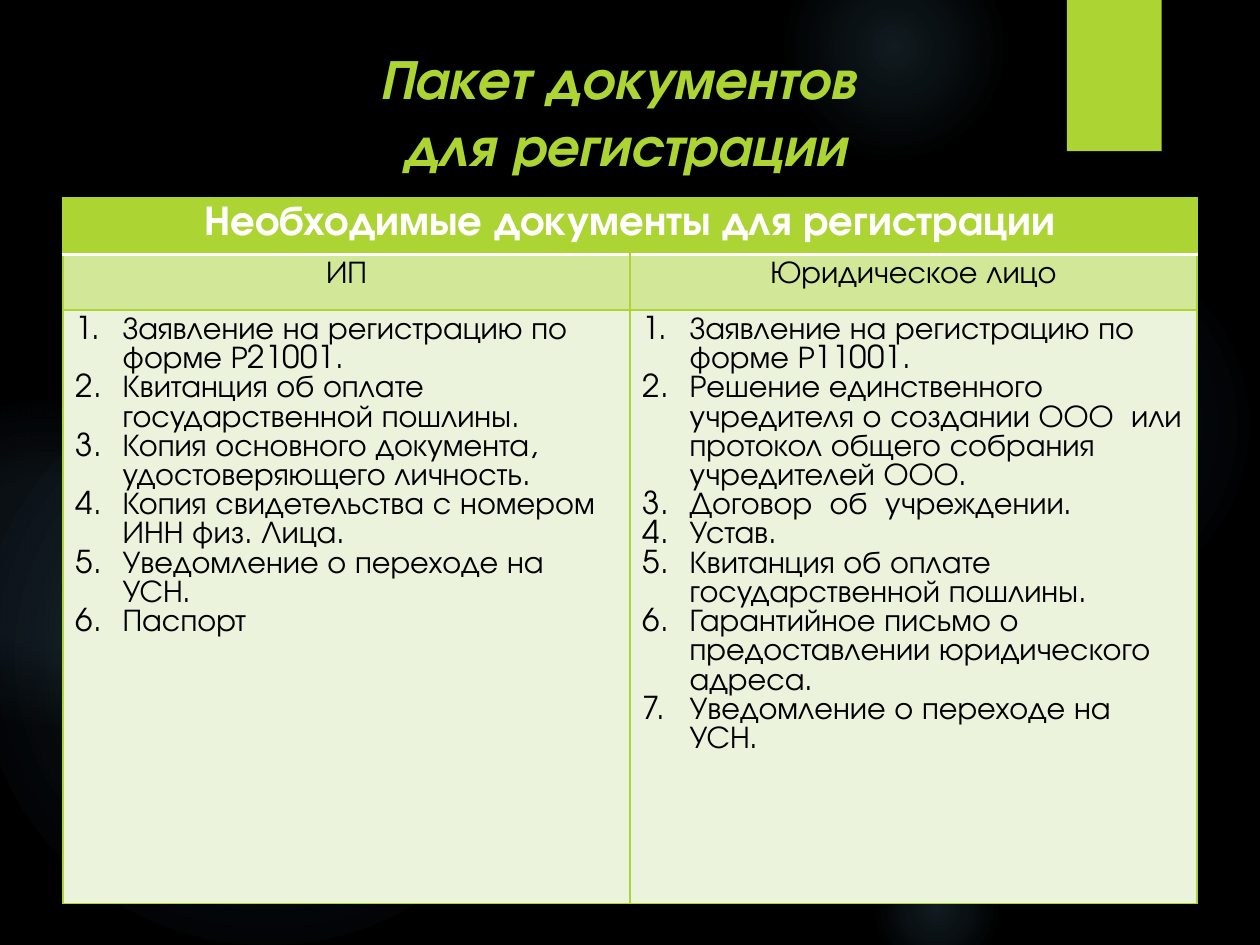
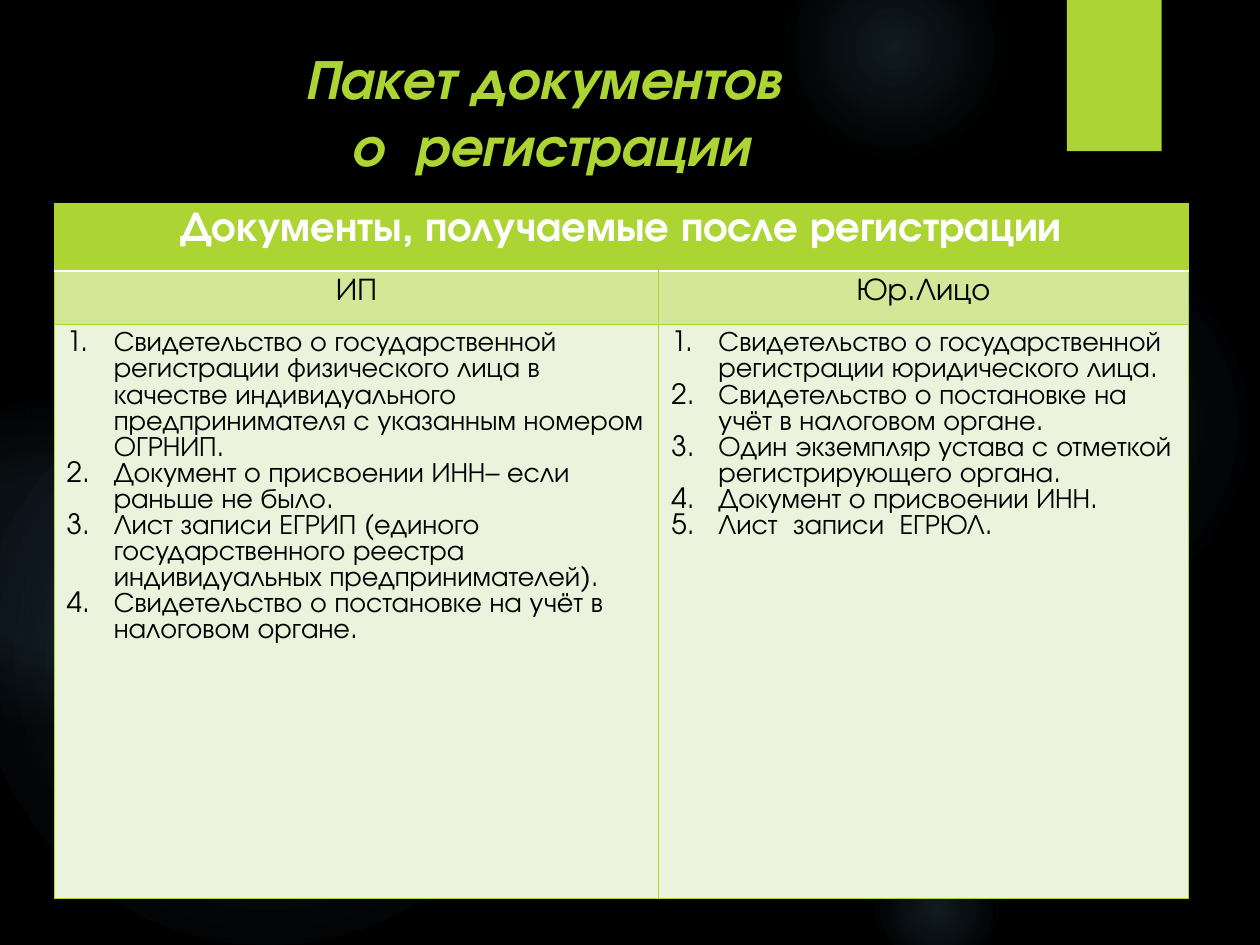
from lxml import etree
from pptx import Presentation
from pptx.dml.color import RGBColor
from pptx.enum.shapes import MSO_SHAPE
from pptx.enum.text import MSO_ANCHOR, MSO_AUTO_SIZE, PP_ALIGN
from pptx.oxml import parse_xml
from pptx.util import Cm, Pt

OVAL, RECT = MSO_SHAPE.OVAL, MSO_SHAPE.RECTANGLE
TOP, FIXED = MSO_ANCHOR.TOP, MSO_AUTO_SIZE.NONE
MID, LEFT = PP_ALIGN.CENTER, PP_ALIGN.LEFT
NS = "http://schemas.openxmlformats.org/drawingml/2006/main"
FACE = "TeX Gyre Adventor"
LIME, GLOW, WHITE, BLACK = "ACD433", "7AC4F0", "FFFFFF", "000000"
FILLS = [LIME, "D2E798", "EBF3DC"]
TIGHT, LOOSE = 0.93, 1.2


def hue(code):
    return RGBColor.from_string(code)


def write(frame, lines, size, color, pitch, align, bold=False, italic=False):
    look = {"name": FACE, "size": Pt(size), "bold": bold, "italic": italic}
    for i, line in enumerate(lines):
        para = frame.add_paragraph() if i else frame.paragraphs[0]
        para.alignment = align
        para.line_spacing = Pt(round(size * pitch, 1))
        para.space_before = para.space_after = Pt(0)
        run = para.add_run()
        run.text = line
        for key, val in look.items():
            setattr(run.font, key, val)
        run.font.color.rgb = hue(color)
        if align == LEFT:
            props = para._p.get_or_add_pPr()
            props.set("marL", str(Cm(0.95)))
            props.set("indent", str(-Cm(0.95)))
            etree.SubElement(props, f"{{{NS}}}buAutoNum", type="arabicPeriod")


pages = [
    {
        "title": ["Пакет документов ", "для регистрации"],
        "box": (1.09, 0.74, 23.01, 2.59),
        "spot": (1.27, 3.99),
        "cols": [11.43, 11.43],
        "rows": [1.14, 1.12, 11.96],
        "head": "Необходимые документы для регистрации",
        "kinds": ["ИП", "Юридическое лицо"],
        "size": 18,
        "lists": [
            [
                "Заявление на регистрацию по форме Р21001.",
                "Квитанция об оплате государственной пошлины.",
                "Копия основного документа, удостоверяющего личность.",
                "Копия свидетельства с номером ИНН физ. Лица.",
                "Уведомление о переходе на УСН.",
                "Паспорт",
            ],
            [
                "Заявление на регистрацию по форме Р11001.",
                "Решение единственного учредителя о создании ООО  или "
                "протокол общего собрания учредителей ООО.",
                "Договор  об  учреждении.",
                "Устав.",
                "Квитанция об оплате государственной пошлины.",
                "Гарантийное письмо о предоставлении юридического адреса.",
                "Уведомление о переходе на УСН.",
            ],
        ],
    },
    {
        "title": ["Пакет документов ", "о  регистрации"],
        "box": (1.09, 0.74, 19.99, 3),
        "spot": (1.09, 4.11),
        "cols": [12.19, 10.67],
        "rows": [1.35, 1.09, 11.56],
        "head": "Документы, получаемые после регистрации",
        "kinds": ["ИП", "Юр.Лицо"],
        "size": 16,
        "lists": [
            [
                "Свидетельство о государственной регистрации физического лица "
                "в качестве индивидуального предпринимателя "
                "с указанным номером ОГРНИП.",
                "Документ о присвоении ИНН– если раньше не было.",
                "Лист записи ЕГРИП (единого государственного реестра "
                "индивидуальных предпринимателей).",
                "Свидетельство о постановке на учёт в налоговом органе.",
            ],
            [
                "Свидетельство о государственной регистрации юридического лица.",
                "Свидетельство о постановке на учёт в налоговом органе.",
                "Один экземпляр устава с отметкой регистрирующего органа.",
                "Документ о присвоении ИНН.",
                "Лист  записи  ЕГРЮЛ.",
            ],
        ],
    },
]

deck = Presentation()
deck.slide_width, deck.slide_height = Cm(25.4), Cm(19.05)
base = deck.slide_layouts[5]
base.background.fill.solid()
base.background.fill.fore_color.rgb = hue(BLACK)
slides = [deck.slides.add_slide(base) for page in pages]

glows = [
    (17.5, 4.65, 7.82, [(0, 7), (36, 6), (69, 0)]),
    (15.8, -1.27, 4.45, [(0, 14), (36, 7), (73, 0)]),
    (17.5, 16.94, 2.74, [(0, 14), (36, 7), (66, 0)]),
    (-0.43, 7.42, 11.63, [(0, 11), (36, 10), (75, 0)]),
    (-2.34, 8.05, 6.55, [(0, 8), (36, 8), (72, 0)]),
]
decor = []
for x, y, side, stops in glows:
    orb = slides[0].shapes.add_shape(OVAL, Cm(x), Cm(y), Cm(side), Cm(side))
    marks = "".join(
        f'<a:gs pos="{pos * 1000}"><a:srgbClr val="{GLOW}">'
        f'<a:alpha val="{alpha * 1000}"/></a:srgbClr></a:gs>'
        for pos, alpha in stops
    )
    orb.element.spPr.insert(2, parse_xml(
        f'<a:gradFill xmlns:a="{NS}"><a:gsLst>{marks}</a:gsLst><a:path path="circle">'
        '<a:fillToRect l="50000" t="50000" r="50000" b="50000"/></a:path></a:gradFill>'
    ))
    decor.append(orb)
tab = slides[0].shapes.add_shape(RECT, Cm(21.51), Cm(0), Cm(1.91), Cm(3.05))
tab.fill.solid()
tab.fill.fore_color.rgb = hue(LIME)
decor.append(tab)
for part in decor:
    part.line.fill.background()
    part.shadow.inherit = False
    base.shapes.element.append(part.element)

for slide, page in zip(slides, pages):
    title = slide.shapes.title
    for key, val in zip(("left", "top", "width", "height"), page["box"]):
        setattr(title, key, Cm(val))
    frame = title.text_frame
    for key, val in {"word_wrap": True, "auto_size": FIXED, "vertical_anchor": TOP}.items():
        setattr(frame, key, val)
    write(frame, page["title"], 32, LIME, LOOSE, MID, True, True)

    x, y = page["spot"]
    wide, tall = sum(page["cols"]), sum(page["rows"])
    grid = slide.shapes.add_table(3, 2, Cm(x), Cm(y), Cm(wide), Cm(tall)).table
    grid.horz_banding = False
    for col, val in zip(grid.columns, page["cols"]):
        col.width = Cm(val)
    for row, val in zip(grid.rows, page["rows"]):
        row.height = Cm(val)
    grid.cell(0, 0).merge(grid.cell(0, 1))

    for r, fill in enumerate(FILLS):
        for c in range(2):
            cell = grid.cell(r, c)
            props = cell._tc.get_or_add_tcPr()
            for edge in "LRTB":
                pale = (r, edge) in [(0, "B"), (1, "T")]
                color, width = (WHITE, 1.5) if pale else (LIME, 0.75)
                props.append(parse_xml(
                    f'<a:ln{edge} xmlns:a="{NS}" w="{Pt(width)}"><a:solidFill>'
                    f'<a:srgbClr val="{color}"/></a:solidFill></a:ln{edge}>'
                ))
            cell.fill.solid()
            cell.fill.fore_color.rgb = hue(fill)

    write(grid.cell(0, 0).text_frame, [page["head"]], 24, WHITE, TIGHT, MID, True)
    for c in range(2):
        write(grid.cell(1, c).text_frame, [page["kinds"][c]], 18, BLACK, TIGHT, MID)
        write(grid.cell(2, c).text_frame, page["lists"][c], page["size"], BLACK, TIGHT, LEFT)

deck.save("out.pptx")
